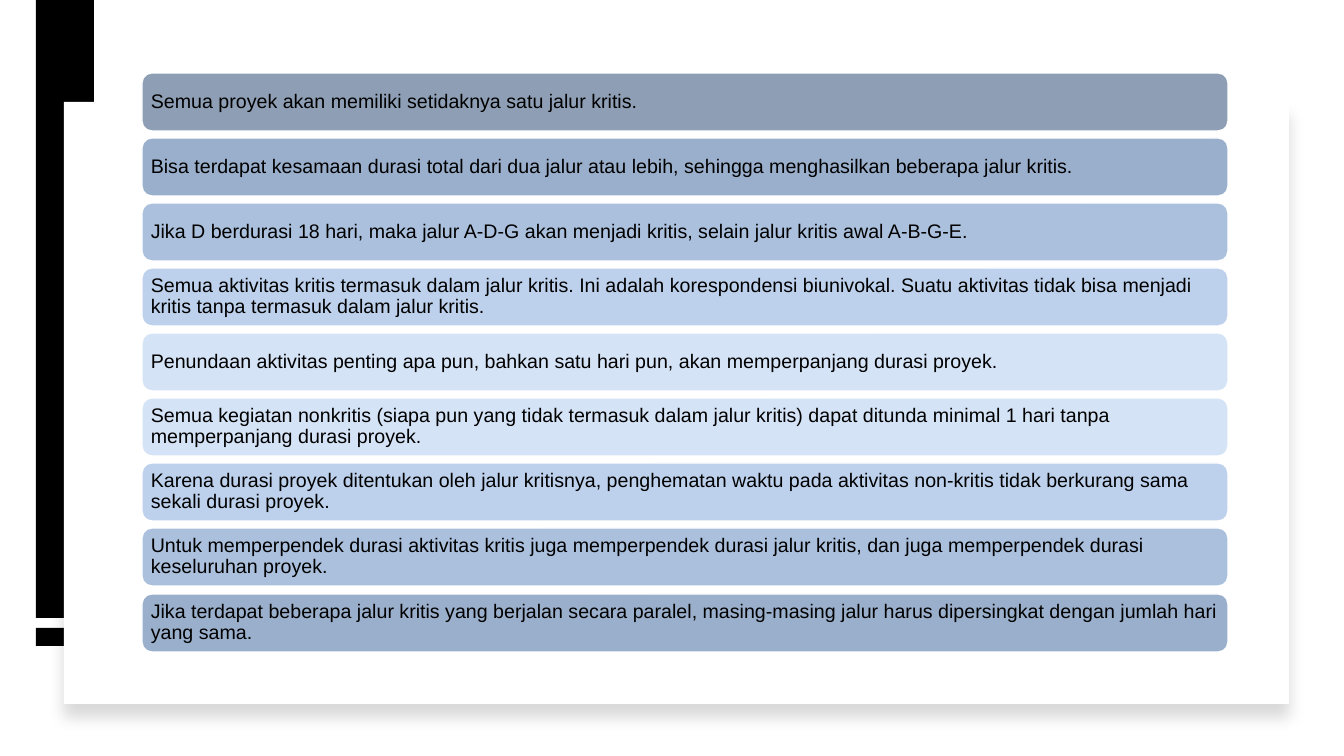
from lxml import etree
from pptx import Presentation
from pptx.dml.color import RGBColor
from pptx.enum.shapes import MSO_SHAPE as Preset
from pptx.enum.text import MSO_ANCHOR as Anchor, PP_ALIGN as Align
from pptx.oxml.ns import qn
from pptx.util import Pt

PX = 914400 / 100.8
COLORS = {
    "black": "000000",
    "white": "FFFFFF",
    "slate": "8E9FB5",
    "steel": "9AAFCB",
    "blue": "AAC0DD",
    "sky": "BDD1EC",
    "pale": "D5E3F6",
}
STATEMENTS = [
    ("slate", "Semua proyek akan memiliki setidaknya satu jalur kritis."),
    ("steel", "Bisa terdapat kesamaan durasi total dari dua jalur atau lebih, sehingga menghasilkan beberapa jalur kritis."),
    ("blue", "Jika D berdurasi 18 hari, maka jalur A-D-G akan menjadi kritis, selain jalur kritis awal A-B-G-E."),
    ("sky", "Semua aktivitas kritis termasuk dalam jalur kritis. Ini adalah korespondensi biunivokal. Suatu aktivitas tidak bisa menjadi kritis tanpa termasuk dalam jalur kritis."),
    ("pale", "Penundaan aktivitas penting apa pun, bahkan satu hari pun, akan memperpanjang durasi proyek."),
    ("pale", "Semua kegiatan nonkritis (siapa pun yang tidak termasuk dalam jalur kritis) dapat ditunda minimal 1 hari tanpa memperpanjang durasi proyek."),
    ("sky", "Karena durasi proyek ditentukan oleh jalur kritisnya, penghematan waktu pada aktivitas non-kritis tidak berkurang sama sekali durasi proyek."),
    ("blue", "Untuk memperpendek durasi aktivitas kritis juga memperpendek durasi jalur kritis, dan juga memperpendek durasi keseluruhan proyek."),
    ("steel", "Jika terdapat beberapa jalur kritis yang berjalan secara paralel, masing-masing jalur harus dipersingkat dengan jumlah hari yang sama."),
]
FIRST_TOP, LAST_TOP = 73, 594


def px(length):
    return round(length * PX)


def add_block(preset, left, top, width, height, color):
    shape = slide.shapes.add_shape(preset, px(left), px(top), px(width), px(height))
    shape.shadow.inherit = False
    shape.fill.solid()
    shape.fill.fore_color.rgb = RGBColor.from_string(COLORS[color])
    shape.line.fill.background()
    return shape


presentation = Presentation()
presentation.slide_width = px(1344)
presentation.slide_height = px(756)
slide = presentation.slides.add_slide(presentation.slide_layouts[6])

add_block(Preset.RECTANGLE, 36, 628, 58, 18, "black")
add_block(Preset.RECTANGLE, 36, 0, 58, 618, "black")
panel = add_block(Preset.RECTANGLE, 64, 102, 1225, 602, "white")

effects = panel.element.spPr.find(qn("a:effectLst"))
shadow = etree.SubElement(effects, qn("a:outerShdw"), blurRad=str(Pt(11)), dist=str(Pt(10)),
                          dir="5400000", algn="t", rotWithShape="0")
shadow_color = etree.SubElement(shadow, qn("a:srgbClr"), val=COLORS["black"])
etree.SubElement(shadow_color, qn("a:alpha"), val="15000")

for row, (color, statement) in enumerate(STATEMENTS):
    top = FIRST_TOP + (LAST_TOP - FIRST_TOP) * row // (len(STATEMENTS) - 1)
    bar = add_block(Preset.ROUNDED_RECTANGLE, 142, top, 1086, 58, color)
    bar.line.color.rgb = RGBColor.from_string(COLORS["white"])
    bar.line.width = Pt(1)

    frame = bar.text_frame
    frame.word_wrap = True
    frame.vertical_anchor = Anchor.MIDDLE
    frame.margin_left = frame.margin_right = px(6)
    frame.margin_top = frame.margin_bottom = px(6)
    paragraph = frame.paragraphs[0]
    paragraph.alignment = Align.LEFT
    paragraph.line_spacing = 0.9
    run = paragraph.add_run()
    run.text = statement
    run.font.name = "Arial"
    run.font.size = Pt(14)
    run.font.color.rgb = RGBColor.from_string(COLORS["black"])

presentation.save("out.pptx")
